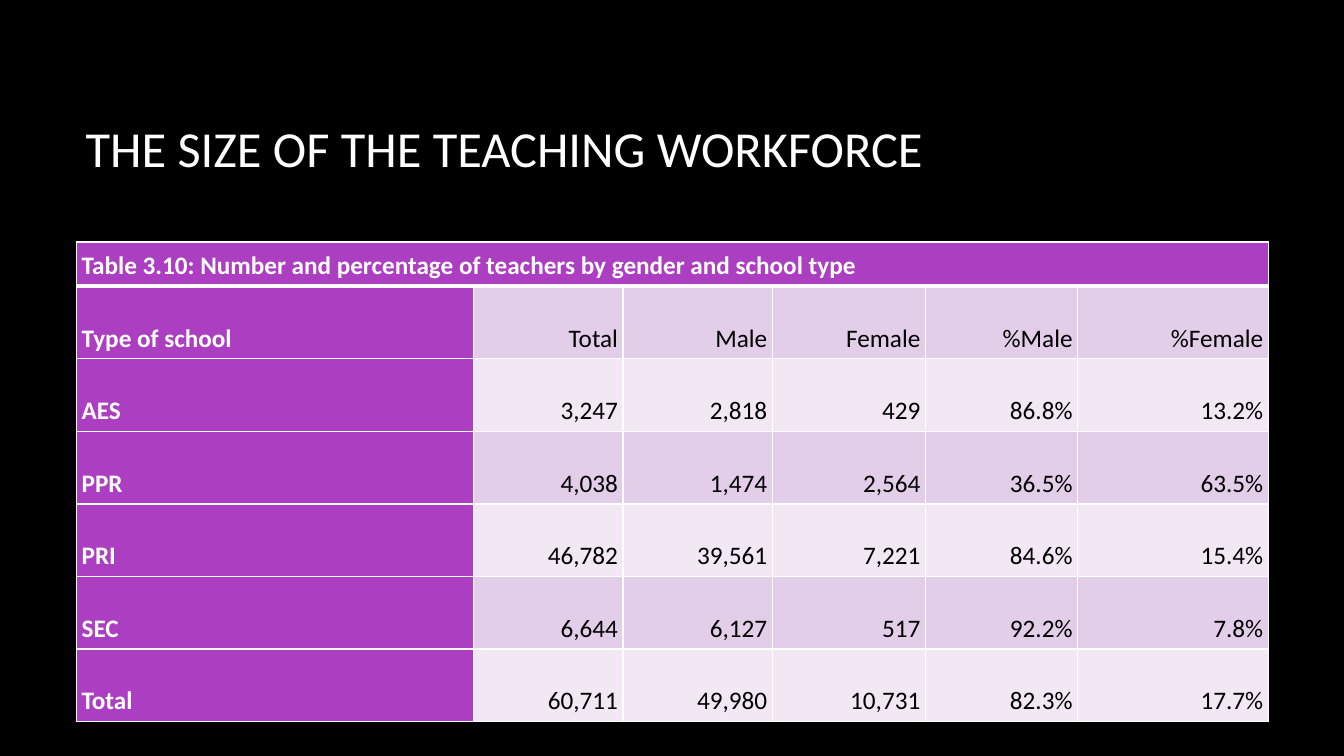
"""Build a slide with a table of teacher numbers by gender and school type."""
from dataclasses import dataclass

from lxml import etree
from pptx import Presentation, util as u
from pptx.dml.color import RGBColor
from pptx.enum import text
from pptx.oxml import ns

SLIDE_WIDTH, SLIDE_HEIGHT = u.Inches(13.33), u.Inches(7.5)
FONT = "Calibri"
COLORS = {
    "background": "000000",
    "light_text": "FFFFFF",
    "dark_text": "000000",
    "border": "FFFFFF",
    "heading": "AC3EC1",
    "odd_band": "E3CEE9",
    "even_band": "F1E8F4",
}
COLUMN_PERCENTS = (29.56, 11.1, 11.1, 11.4, 11.33, 14.18)
CAPTION_PERCENT, ROW_PERCENT = 5.87, 9.6
CAPTION = "Table 3.10: Number and percentage of teachers by gender and school type"
TEACHERS = (
    ("Type of school", "Total", "Male", "Female", "%Male", "%Female"),
    ("AES", "3,247", "2,818", "429", "86.8%", "13.2%"),
    ("PPR", "4,038", "1,474", "2,564", "36.5%", "63.5%"),
    ("PRI", "46,782", "39,561", "7,221", "84.6%", "15.4%"),
    ("SEC", "6,644", "6,127", "517", "92.2%", "7.8%"),
    ("Total", "60,711", "49,980", "10,731", "82.3%", "17.7%"),
)


@dataclass(frozen=True)
class CellLook:
    """Colours, weight and paragraph layout of one kind of cell."""

    fill: str
    color: str = "light_text"
    bold: bool = True
    align: text.PP_ALIGN = text.PP_ALIGN.LEFT
    space_after: int = 8


CAPTION_LOOK = CellLook("heading", space_after=0)
LABEL_LOOK = CellLook("heading")
ODD_LOOK, EVEN_LOOK = (
    CellLook(band, "dark_text", False, text.PP_ALIGN.RIGHT)
    for band in ("odd_band", "even_band")
)


def across(percent: float) -> int:
    """Return a percentage of the slide width."""
    return round(SLIDE_WIDTH * percent / 100)


def down(percent: float) -> int:
    """Return a percentage of the slide height."""
    return round(SLIDE_HEIGHT * percent / 100)


def color_of(name: str) -> RGBColor:
    """Return a named colour."""
    return RGBColor.from_string(COLORS[name])


def add_run(paragraph, words: str, size: int, color: str, bold: bool = False) -> None:
    """Add one formatted run."""
    run = paragraph.add_run()
    run.text = words
    run.font.name, run.font.size, run.font.bold = FONT, u.Pt(size), bold
    run.font.color.rgb = color_of(color)


def add_borders(cell, top: int, bottom: int) -> None:
    """Draw the four borders of a cell, widths in points."""
    properties = cell._tc.get_or_add_tcPr()
    for side, width in (("L", 1), ("R", 1), ("T", top), ("B", bottom)):
        line = etree.SubElement(properties, ns.qn(f"a:ln{side}"), w=str(u.Pt(width)))
        fill = etree.SubElement(line, ns.qn("a:solidFill"))
        etree.SubElement(fill, ns.qn("a:srgbClr"), val=COLORS["border"])


def style_cell(cell, look: CellLook, row: int) -> None:
    """Set the borders, fill, margins and anchor of a cell."""
    add_borders(cell, 3 if row == 1 else 1, 3 if row == 0 else 1)
    cell.fill.solid()
    cell.fill.fore_color.rgb = color_of(look.fill)
    cell.margin_left = cell.margin_right = u.Inches(0.05)
    cell.margin_top = cell.margin_bottom = u.Inches(0.05)
    cell.vertical_anchor = text.MSO_ANCHOR.BOTTOM


def write_cell(cell, words: str, look: CellLook) -> None:
    """Write the text of a cell."""
    paragraph = cell.text_frame.paragraphs[0]
    paragraph.alignment = look.align
    paragraph.line_spacing = 1.07
    paragraph.space_after = u.Pt(look.space_after)
    add_run(paragraph, words, 18, look.color, look.bold)


def add_title(slide, words: str) -> None:
    """Add the slide title."""
    shape = slide.shapes.add_textbox(across(5.63), down(8.93), across(83.12), down(21.2))
    frame = shape.text_frame
    frame.word_wrap = True
    frame.vertical_anchor = text.MSO_ANCHOR.MIDDLE
    add_run(frame.paragraphs[0], words, 36, "light_text")


def add_teacher_table(slide) -> None:
    """Add the captioned table of teachers."""
    heights = [CAPTION_PERCENT] + [ROW_PERCENT] * len(TEACHERS)
    table = slide.shapes.add_table(
        len(heights), len(COLUMN_PERCENTS), across(5.7), down(32),
        across(sum(COLUMN_PERCENTS)), down(sum(heights)),
    ).table
    table.first_row = table.horz_banding = False
    for column, percent in zip(table.columns, COLUMN_PERCENTS):
        column.width = across(percent)
    for row, percent in zip(table.rows, heights):
        row.height = down(percent)

    for cell in table.rows[0].cells:
        style_cell(cell, CAPTION_LOOK, 0)
    table.cell(0, 0).merge(table.cell(0, len(COLUMN_PERCENTS) - 1))
    write_cell(table.cell(0, 0), CAPTION, CAPTION_LOOK)

    for row, values in enumerate(TEACHERS, start=1):
        band_look = ODD_LOOK if row % 2 else EVEN_LOOK
        for column, words in enumerate(values):
            look = band_look if column else LABEL_LOOK
            cell = table.cell(row, column)
            style_cell(cell, look, row)
            write_cell(cell, words, look)


def main() -> None:
    """Build and save the presentation."""
    presentation = Presentation()
    presentation.slide_width, presentation.slide_height = SLIDE_WIDTH, SLIDE_HEIGHT
    slide = presentation.slides.add_slide(presentation.slide_layouts[6])
    slide.background.fill.solid()
    slide.background.fill.fore_color.rgb = color_of("background")
    add_title(slide, "THE SIZE OF THE TEACHING WORKFORCE")
    add_teacher_table(slide)
    presentation.save("out.pptx")


if __name__ == "__main__":
    main()
